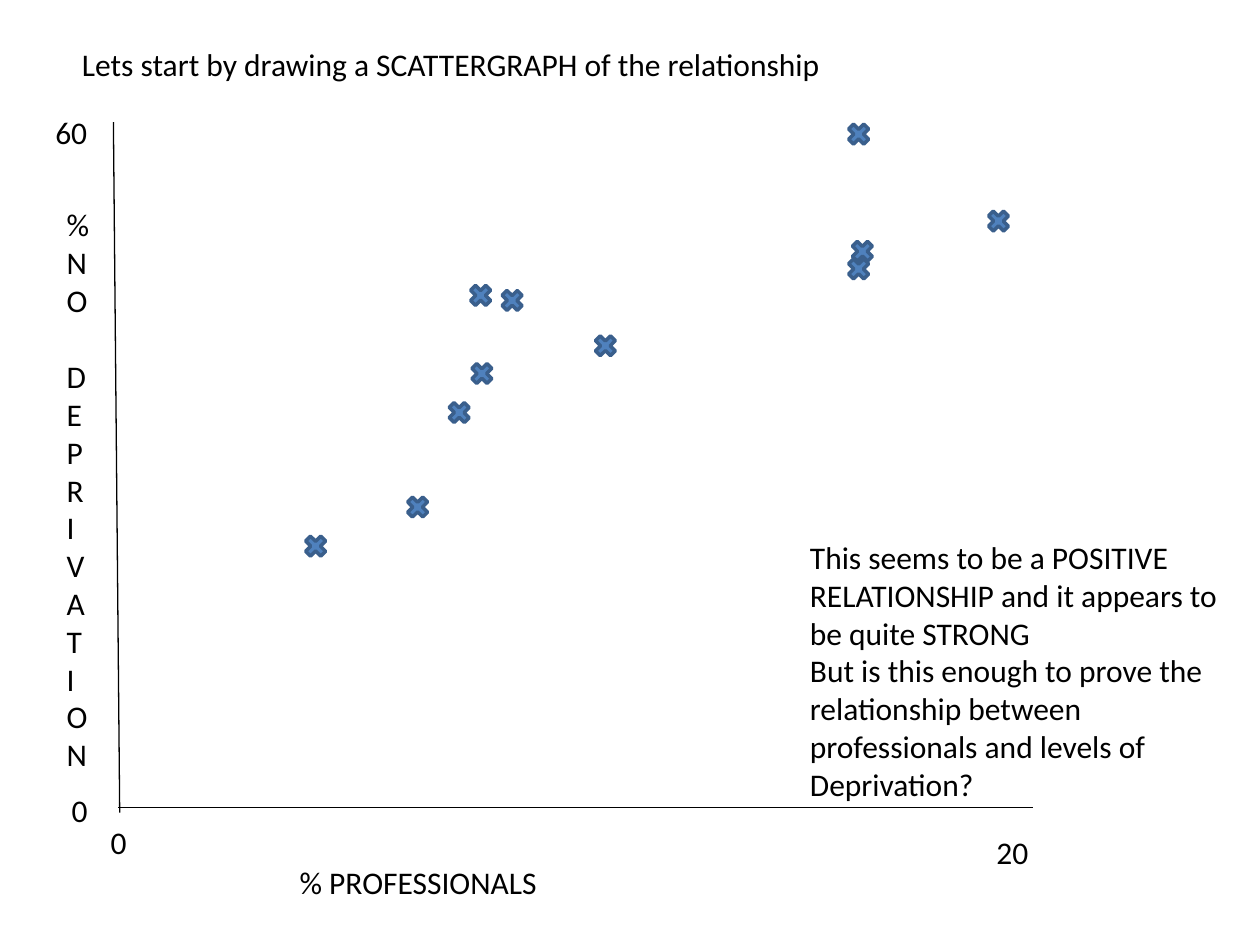
import pptx
import pptx.dml.color
import pptx.enum.shapes
import pptx.enum.text
import pptx.oxml
import pptx.oxml.ns
import pptx.util

Inches = pptx.util.Inches
Pt = pptx.util.Pt

MARKER_SIZE = 0.23
MARKERS = [
    (3.95, 2.27), (3.53, 3.16), (3.7, 2.23), (4.69, 2.63),
    (3.71, 2.85), (7.81, 1.64), (6.7, 0.95), (6.7, 2.02),
    (3.2, 3.91), (6.73, 1.88), (2.39, 4.22),
]
AXES = [(0.94, 6.41, 8.2, 6.41), (0.95, 6.45, 0.9, 0.97)]
AXIS_LABELS = [
    ("0", 0.78, 6.48, 0.55),
    ("20", 7.81, 6.56, 0.47),
    ("% PROFESSIONALS", 2.28, 6.8, 4.14),
    ("0", 0.47, 6.23, 0.31),
    ("60", 0.34, 0.85, 0.55),
]
VERTICAL_LABEL = ["%NO", "DEPR", "I", "VAT", "I", "ON"]
CONCLUSION = [
    "This seems to be a POSITIVE RELATIONSHIP and it appears to be quite STRONG",
    "But is this enough to prove the relationship between professionals and levels of Deprivation?",
]


def color(value):
    return pptx.dml.color.RGBColor.from_string(value)


def write_text(frame, paragraphs, size=18, font="Calibri", fill="000000", gaps=None):
    frame.word_wrap = True
    frame.auto_size = pptx.enum.text.MSO_AUTO_SIZE.NONE
    frame.vertical_anchor = pptx.enum.text.MSO_ANCHOR.TOP
    for index, text in enumerate(paragraphs):
        paragraph = frame.paragraphs[0] if index == 0 else frame.add_paragraph()
        paragraph.alignment = pptx.enum.text.PP_ALIGN.LEFT
        if gaps and index in gaps:
            paragraph.space_before = Pt(gaps[index])
        run = paragraph.add_run()
        run.text = text
        run.font.size = Pt(size)
        run.font.name = font
        run.font.color.rgb = color(fill)


class ScatterSlide:
    marker_fill = "4F81BD"
    marker_line = "3A5F8C"
    axis_line = "000000"

    def __init__(self, presentation):
        self.slide = presentation.slides.add_slide(presentation.slide_layouts[5])

    def title(self, text, left, top, width, height):
        shape = self.slide.shapes.title
        shape.left, shape.top = Inches(left), Inches(top)
        shape.width, shape.height = Inches(width), Inches(height)
        write_text(shape.text_frame, [text])

    def text(self, paragraphs, left, top, width, height=0.4, gaps=None):
        shape = self.slide.shapes.add_textbox(
            Inches(left), Inches(top), Inches(width), Inches(height))
        write_text(shape.text_frame, paragraphs, gaps=gaps)

    def axis(self, *ends):
        connector = self.slide.shapes.add_connector(
            pptx.enum.shapes.MSO_CONNECTOR.STRAIGHT, *map(Inches, ends))
        connector.line.color.rgb = color(self.axis_line)
        connector.line.width = Pt(0.75)
        properties = connector._element.spPr
        properties.append(pptx.oxml.parse_xml(
            "<a:effectLst %s/>" % pptx.oxml.ns.nsdecls("a")))

    def marker(self, left, top):
        shape = self.slide.shapes.add_shape(
            pptx.enum.shapes.MSO_SHAPE.MATH_MULTIPLY,
            Inches(left), Inches(top), Inches(MARKER_SIZE), Inches(MARKER_SIZE))
        shape.shadow.inherit = False
        shape.fill.solid()
        shape.fill.fore_color.rgb = color(self.marker_fill)
        shape.line.color.rgb = color(self.marker_line)
        shape.line.width = Pt(2)


def main():
    presentation = pptx.Presentation()
    presentation.slide_width = Inches(10)
    presentation.slide_height = Inches(7.5)

    scatter = ScatterSlide(presentation)
    scatter.title("Lets start by drawing a SCATTERGRAPH of the relationship",
                  0.55, 0.31, 8.52, 0.4)
    for ends in AXES:
        scatter.axis(*ends)
    for label, left, top, width in AXIS_LABELS:
        scatter.text([label], left, top, width)
    scatter.text(VERTICAL_LABEL, 0.43, 1.58, 0.44, 4.64, gaps={1: 22})
    for left, top in MARKERS:
        scatter.marker(left, top)
    scatter.text(CONCLUSION, 6.33, 4.22, 3.44, 2.22)

    presentation.save("out.pptx")


if __name__ == "__main__":
    main()
